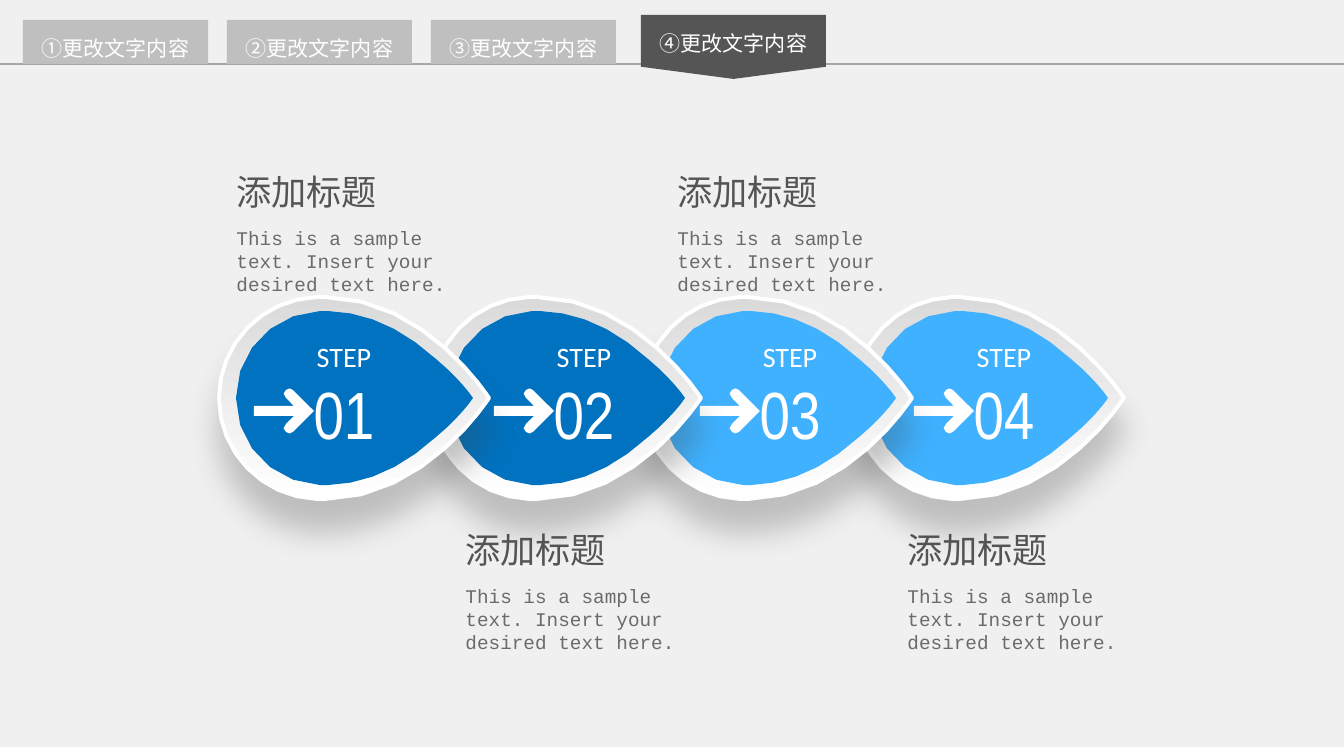
import pptx
import pptx.util
import pptx.dml.color
import pptx.enum.shapes
import pptx.enum.text
import pptx.oxml
import pptx.oxml.ns

RGB = pptx.dml.color.RGBColor
SHAPE = pptx.enum.shapes.MSO_SHAPE
ALIGN = pptx.enum.text.PP_ALIGN
PX = 914400 / 126.4

BACKGROUND = RGB(0xF0, 0xF0, 0xF0)
WHITE = RGB(0xFF, 0xFF, 0xFF)
RIM_TOP = RGB(0xDA, 0xDA, 0xDA)
RULE = RGB(0xA6, 0xA6, 0xA6)
TAB = RGB(0xBF, 0xBF, 0xBF)
DARK = RGB(0x55, 0x55, 0x55)
BODY = RGB(0x6B, 0x6B, 0x6B)
DEEP_BLUE = RGB(0x00, 0x72, 0xBF)
SKY_BLUE = RGB(0x3F, 0xB1, 0xFF)
CJK = "Noto Sans CJK SC"

# label, left, top, height, point depth, text top, fill
TABS = [
    ("①更改文字内容", 23, 20, 44, 0, 30, TAB),
    ("②更改文字内容", 227, 20, 44, 0, 30, TAB),
    ("③更改文字内容", 431, 20, 44, 0, 30, TAB),
    ("④更改文字内容", 641, 15, 64, 0.19, 25, DARK),
]
TAB_WIDTH = 185
RULE_Y = 64

TITLE = "添加标题"
SAMPLE = "This is a sample text. Insert your desired text here."
# number, drop left, arrow left, caption left, caption top, fill
STEPS = [
    ("01", 219, 254, 224, 164, DEEP_BLUE),
    ("02", 431, 494, 453, 522, DEEP_BLUE),
    ("03", 642, 700, 665, 164, SKY_BLUE),
    ("04", 854, 914, 895, 522, SKY_BLUE),
]
MIDDLE_Y = 398
ARROW_Y = 411

# upper halves; each entry is one point of a line or three points of a curve
RIM = [[(0, 0)], [(0, -54), (43, -99), (98, -101)], [(106, -101)],
       [(207, -100), (270, 0), (270, 0)]]
CORE = [[(17, 0)], [(17, -47), (54, -85), (101, -87)], [(109, -87)],
        [(147, -86), (183, -70), (217, -39)], [(235, -24), (248, -9), (254, 0)]]
ARROW = [[(0, -5)], [(40, -5)], [(32, -13)], [(29, -16), (29, -19), (32, -21)],
         [(34, -23), (37, -23), (39, -21)], [(60, 0)]]


def emu(v):
    return pptx.util.Emu(round(v * PX))


def flatten(segments, steps):
    points = []
    for seg in segments:
        if len(seg) == 1:
            points += seg
            continue
        nodes = [points[-1]] + seg
        for i in range(1, steps + 1):
            t = i / steps
            weights = ((1 - t) ** 3, 3 * t * (1 - t) ** 2, 3 * t * t * (1 - t), t ** 3)
            points.append(tuple(sum(w * n[k] for w, n in zip(weights, nodes))
                                for k in (0, 1)))
    return points


def paint(sp, color):
    sp.shadow.inherit = False
    sp.fill.solid()
    sp.fill.fore_color.rgb = color
    sp.line.fill.background()


def add_symmetric(s, half, left, middle, steps):
    upper = flatten(half, steps)
    outline = upper + [(x, -y) for x, y in reversed(upper) if y]
    points = [(emu(left + x), emu(middle + y)) for x, y in outline]
    builder = s.shapes.build_freeform(*points[0])
    builder.add_line_segments(points[1:], close=True)
    return builder.convert_to_shape()


def add_text(s, box, lines, align=ALIGN.LEFT, inset=None, wrap=True, spacing=None):
    tf = s.shapes.add_textbox(*map(emu, box)).text_frame
    tf.word_wrap = wrap
    if inset is not None:
        tf.margin_left = tf.margin_right = emu(2 * inset)
        tf.margin_top = tf.margin_bottom = emu(inset)
    for i, (text, size, font, color) in enumerate(lines):
        p = tf.add_paragraph() if i else tf.paragraphs[0]
        p.alignment = align
        if spacing:
            p.line_spacing = spacing
        r = p.add_run()
        r.text = text
        r.font.size = pptx.util.Pt(size)
        r.font.name = font
        r.font.color.rgb = color
        if font == CJK:
            ea = pptx.oxml.parse_xml(
                f'<a:ea {pptx.oxml.ns.nsdecls("a")} typeface="{CJK}"/>')
            r.font._element.append(ea)


def add_rule(s):
    line = s.shapes.add_connector(pptx.enum.shapes.MSO_CONNECTOR.STRAIGHT,
                                  0, emu(RULE_Y), emu(1344), emu(RULE_Y))
    line.line.color.rgb = RULE
    line.line.width = pptx.util.Pt(0.75)
    line._element.spPr.append(pptx.oxml.parse_xml(
        f'<a:effectLst {pptx.oxml.ns.nsdecls("a")}/>'))


def add_tab(s, label, left, top, height, depth, text_top, fill):
    x = left + (TAB_WIDTH - height) / 2
    y = top + (height - TAB_WIDTH) / 2
    sp = s.shapes.add_shape(SHAPE.PENTAGON, *map(emu, (x, y, height, TAB_WIDTH)))
    sp.rotation = 90
    sp.adjustments[0] = depth
    paint(sp, fill)
    add_text(s, (left, text_top, TAB_WIDTH, 34), [(label, 12, CJK, WHITE)],
             ALIGN.CENTER, inset=0, spacing=1.2)


def add_caption(s, left, top):
    add_text(s, (left, top, 201, 56), [(TITLE, 20, CJK, DARK)])
    add_text(s, (left, top + 56, 265, 59), [(SAMPLE, 11, "Courier New", BODY)])


def add_step(s, number, left, arrow_left, fill):
    rim = add_symmetric(s, RIM, left, MIDDLE_Y, 8)
    rim.fill.gradient()
    rim.fill.gradient_angle = 270
    for stop, color, place in zip(rim.fill.gradient_stops, (RIM_TOP, WHITE), (0, 1)):
        stop.color.rgb = color
        stop.position = place
    rim.line.color.rgb = WHITE
    rim.line.width = pptx.util.Pt(2.25)
    rim.shadow.inherit = False
    effects = rim._element.spPr.find(pptx.oxml.ns.qn("a:effectLst"))
    effects.append(pptx.oxml.parse_xml(
        f'<a:outerShdw {pptx.oxml.ns.nsdecls("a")} blurRad="228600" dist="228600" '
        'dir="5400000" algn="t" rotWithShape="0"><a:srgbClr val="3E3E3E">'
        '<a:alpha val="28000"/></a:srgbClr></a:outerShdw>'))
    paint(add_symmetric(s, CORE, left, MIDDLE_Y, 5), fill)
    paint(add_symmetric(s, ARROW, arrow_left, ARROW_Y, 2), WHITE)
    add_text(s, (arrow_left + 45, 334, 90, 125),
             [("STEP", 16, "Calibri", WHITE), (number, 38, "Arial Narrow", WHITE)],
             ALIGN.CENTER, inset=5, wrap=False)


def main():
    prs = pptx.Presentation()
    prs.slide_width, prs.slide_height = emu(1344), emu(747)
    s = prs.slides.add_slide(prs.slide_layouts[6])
    s.background.fill.solid()
    s.background.fill.fore_color.rgb = BACKGROUND
    add_rule(s)
    for tab in TABS:
        add_tab(s, *tab)
    for step in STEPS:
        add_caption(s, *step[3:5])
    for number, left, arrow_left, _, _, fill in reversed(STEPS):
        add_step(s, number, left, arrow_left, fill)
    prs.save("out.pptx")


if __name__ == "__main__":
    main()
